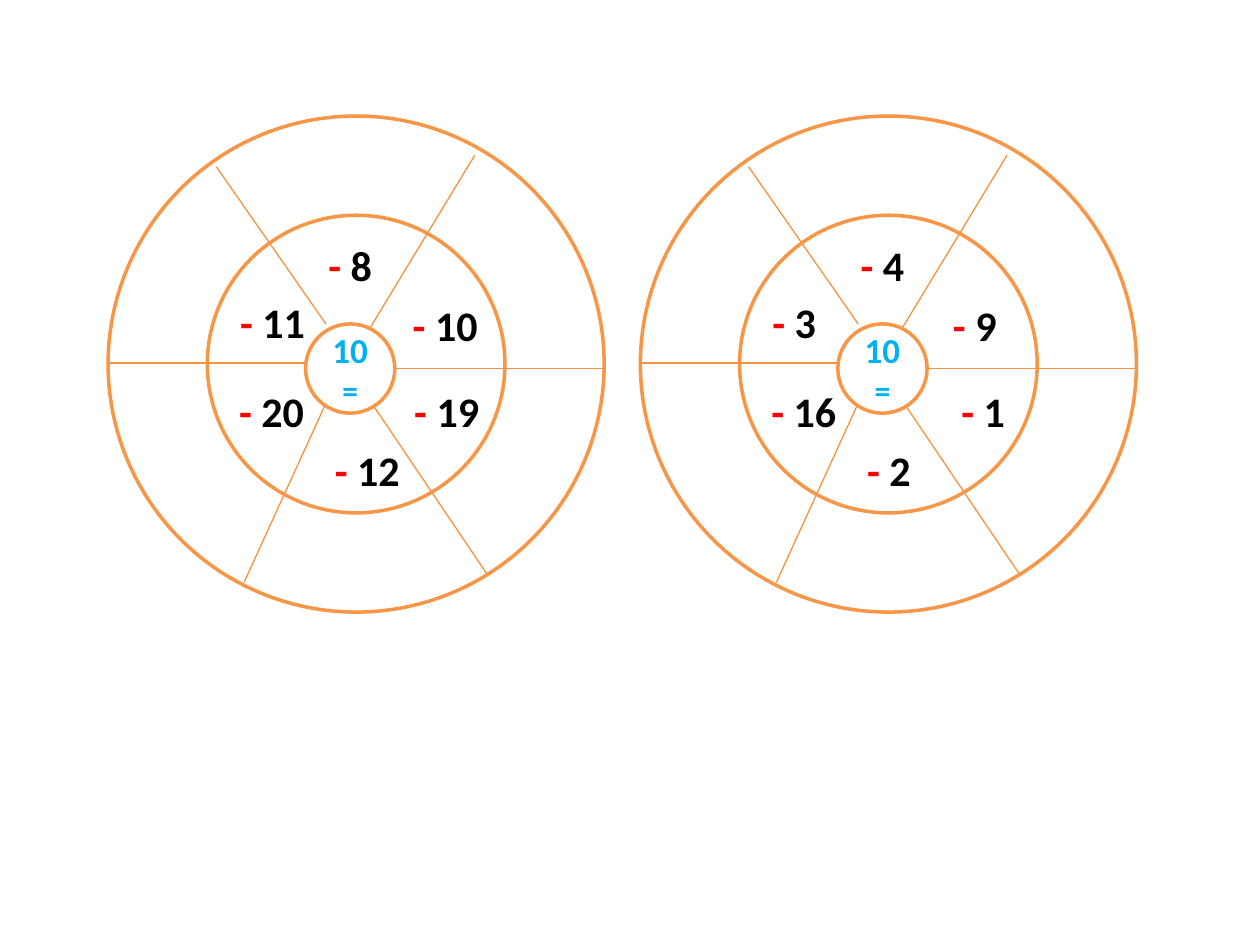
from dataclasses import dataclass

import pptx
import pptx.dml.color
import pptx.enum.shapes
import pptx.enum.text
import pptx.oxml
import pptx.oxml.ns
import pptx.util

Cm = pptx.util.Cm
Pt = pptx.util.Pt
RGB = pptx.dml.color.RGBColor


@dataclass(frozen=True)
class Theme:
    ring = RGB.from_string("F79646")
    spoke = RGB.from_string("F69240")
    hub_fill = RGB.from_string("FFFFFF")
    hub_text = RGB.from_string("00B0F0")
    minus = RGB.from_string("FF0000")
    number = RGB.from_string("000000")
    font = "Calibri"
    ring_width = Pt(2)
    spoke_width = Pt(0.75)
    hub_size = Pt(20)
    equals_size = Pt(18)
    label_size = Pt(24)


THEME = Theme()

# All places inside a wheel are in cm from the wheel's top left corner.
OUTER, INNER, HUB = (0, 0, 10), (2, 2, 6), (3.98, 4.19, 1.8)
LOWER_SPOKES = [
    (5.18, 5.59, 7.65, 9.25),
    (4.39, 4.19, 2.18, 1.02),
    (5.08, 4.6, 7.39, 0.79),
    (4.39, 5.79, 2.74, 9.4),
]
SIDE_SPOKES = [(5.78, 5.09, 10, 5.09), (3.98, 4.98, 0, 4.98)]

WHEEL_TOP = 2.34
WHEELS = [
    # wheel left, then number, label left, label top for each sector
    (2.18, [("8", 4.19, 2.36), ("11", 2.41, 3.51), ("10", 5.89, 3.58),
            ("20", 2.39, 5.31), ("12", 4.32, 6.5), ("19", 5.92, 5.31)]),
    (12.91, [("4", 4.19, 2.36), ("3", 2.41, 3.51), ("9", 6.05, 3.58),
             ("16", 2.39, 5.31), ("2", 4.32, 6.5), ("1", 6.22, 5.31)]),
]


def add_run(paragraph, text, size, color):
    run = paragraph.add_run()
    run.text = text
    run.font.name = THEME.font
    run.font.size = size
    run.font.bold = True
    run.font.color.rgb = color


def add_spoke(group, left, spoke):
    x1, y1, x2, y2 = spoke
    line = group.shapes.add_connector(
        pptx.enum.shapes.MSO_CONNECTOR.STRAIGHT,
        Cm(left + x1), Cm(WHEEL_TOP + y1), Cm(left + x2), Cm(WHEEL_TOP + y2))
    line.line.color.rgb = THEME.spoke
    line.line.width = THEME.spoke_width
    properties = line._element.spPr
    properties.append(pptx.oxml.parse_xml(
        "<a:effectLst %s/>" % pptx.oxml.ns.nsdecls("a")))


def add_ring(group, left, ring):
    x, y, diameter = ring
    circle = group.shapes.add_shape(
        pptx.enum.shapes.MSO_SHAPE.OVAL,
        Cm(left + x), Cm(WHEEL_TOP + y), Cm(diameter), Cm(diameter))
    circle.shadow.inherit = False
    circle.fill.background()
    circle.line.color.rgb = THEME.ring
    circle.line.width = THEME.ring_width
    return circle


def add_hub(group, left):
    hub = add_ring(group, left, HUB)
    hub.fill.solid()
    hub.fill.fore_color.rgb = THEME.hub_fill
    frame = hub.text_frame
    frame.vertical_anchor = pptx.enum.text.MSO_ANCHOR.MIDDLE
    start, equals = frame.paragraphs[0], frame.add_paragraph()
    add_run(start, "10", THEME.hub_size, THEME.hub_text)
    add_run(equals, "=", THEME.equals_size, THEME.hub_text)
    for paragraph in (start, equals):
        paragraph.alignment = pptx.enum.text.PP_ALIGN.CENTER


def add_label(group, left, number, x, y):
    """Write the amount to subtract in one sector."""
    width = 1.4 if len(number) == 1 else 1.83
    label = group.shapes.add_textbox(
        Cm(left + x), Cm(WHEEL_TOP + y), Cm(width), Cm(1.28))
    frame = label.text_frame
    frame.word_wrap = False
    frame.auto_size = pptx.enum.text.MSO_AUTO_SIZE.SHAPE_TO_FIT_TEXT
    add_run(frame.paragraphs[0], "- ", THEME.label_size, THEME.minus)
    add_run(frame.paragraphs[0], number, THEME.label_size, THEME.number)


def add_wheel(slide, left, labels):
    group = slide.shapes.add_group_shape()
    for spoke in LOWER_SPOKES:
        add_spoke(group, left, spoke)
    add_hub(group, left)
    for spoke in SIDE_SPOKES:
        add_spoke(group, left, spoke)
    for ring in (INNER, OUTER):
        add_ring(group, left, ring)
    for number, x, y in labels:
        add_label(group, left, number, x, y)


def main():
    deck = pptx.Presentation()
    deck.slide_width, deck.slide_height = Cm(25.4), Cm(19.05)
    slide = deck.slides.add_slide(deck.slide_layouts[6])
    for left, labels in WHEELS:
        add_wheel(slide, left, labels)
    deck.save("out.pptx")


if __name__ == "__main__":
    main()
